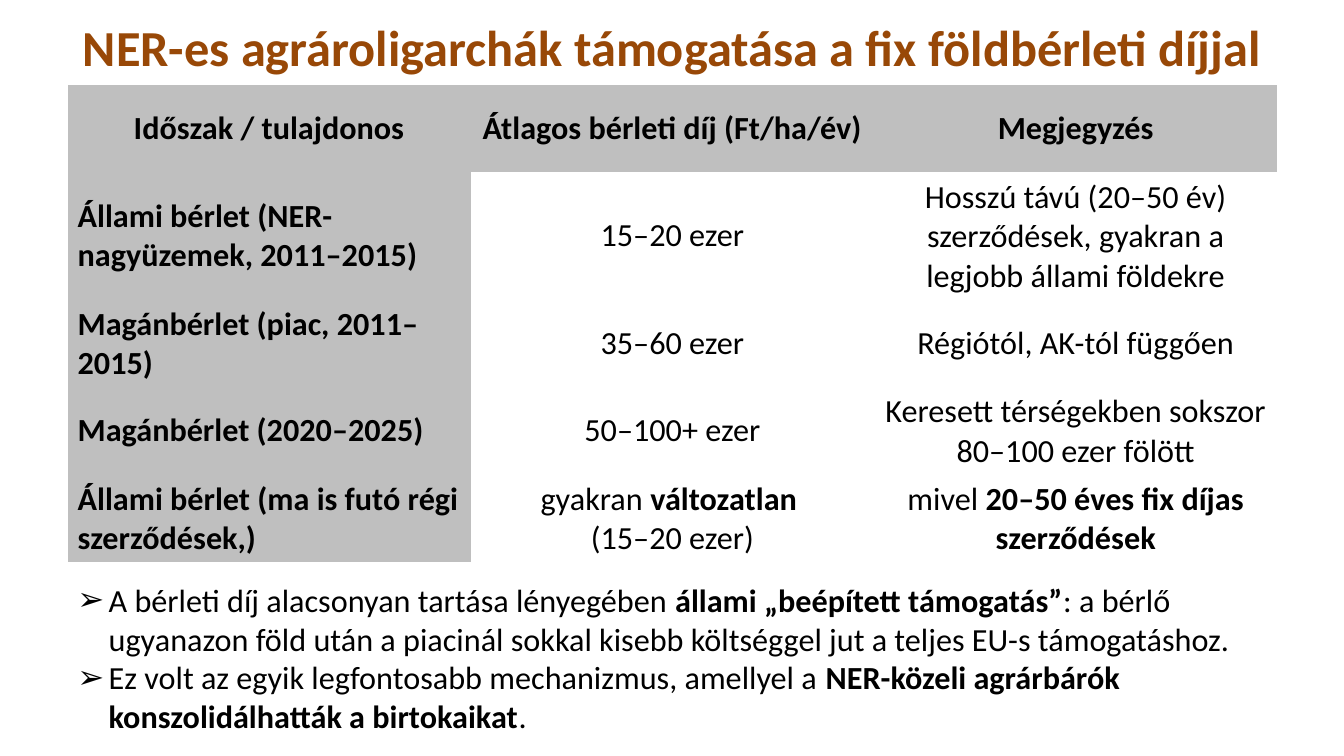
from lxml import etree
from pptx import Presentation, util as u
from pptx.dml.color import RGBColor
from pptx.enum import text
from pptx.oxml import ns

FONT = "Calibri"
BLACK, BROWN, GREY = "000000", "984807", "BFBFBF"
NO_GRID_STYLE = "{2D5ABB26-0587-4C30-8999-92F81FD0307C}"
LEFT, CENTER = text.PP_ALIGN.LEFT, text.PP_ALIGN.CENTER

TITLE = "**NER-es agrároligarchák támogatása a fix földbérleti díjjal**"
ROW_HEIGHTS = [0.87, 1.26, 0.87, 0.87, 0.87]
RENT_ROWS = [
    ["**Időszak / tulajdonos**", "**Átlagos bérleti díj (Ft/ha/év)**", "**Megjegyzés**"],
    ["**Állami bérlet (NER-nagyüzemek, 2011–2015)**", "15–20 ezer",
     "Hosszú távú (20–50 év) szerződések, gyakran a legjobb állami földekre"],
    ["**Magánbérlet (piac, 2011–2015)**", "35–60 ezer", "Régiótól, AK-tól függően"],
    ["**Magánbérlet (2020–2025)**", "50–100+ ezer",
     "Keresett térségekben sokszor 80–100 ezer fölött"],
    ["**Állami bérlet (ma is futó régi szerződések,)**",
     "gyakran **változatlan **\n(15–20 ezer)",
     "mivel **20–50 éves fix díjas szerződések**"],
]
CONCLUSIONS = (
    "A bérleti díj alacsonyan tartása lényegében **állami „beépített támogatás”**: a bérlő "
    "ugyanazon föld után a piacinál sokkal kisebb költséggel jut a teljes EU-s támogatáshoz.\n"
    "Ez volt az egyik legfontosabb mechanizmus, amellyel a "
    "**NER-közeli agrárbárók konszolidálhatták a birtokaikat**."
)


def color(value):
    """Turn a hex string into a colour."""
    return RGBColor.from_string(value)


def add_bullet(paragraph, character, indent):
    """Give a paragraph a hanging bullet."""
    properties = paragraph._p.get_or_add_pPr()
    properties.set("marL", str(u.Inches(indent)))
    properties.set("indent", str(-u.Inches(indent)))
    etree.SubElement(properties, ns.qn("a:buFont"), typeface="Arial")
    etree.SubElement(properties, ns.qn("a:buChar"), char=character)


def write(frame, content, size=23, fill=BLACK, align=LEFT, bullet=None):
    """Write lines into a text frame, with **marked** parts in bold."""
    frame.word_wrap = True
    for index, line in enumerate(content.split("\n")):
        paragraph = frame.add_paragraph() if index else frame.paragraphs[0]
        paragraph.alignment = align
        if bullet:
            add_bullet(paragraph, bullet, 0.31)
        for part_index, part in enumerate(line.split("**")):
            if part:
                run = paragraph.add_run()
                run.text = part
                run.font.name = FONT
                run.font.size = u.Pt(size)
                run.font.bold = part_index % 2 == 1
                run.font.color.rgb = color(fill)


def add_text(slide, box, content, **formatting):
    """Place a text box with formatted text."""
    shape = slide.shapes.add_textbox(*map(u.Inches, box))
    write(shape.text_frame, content, **formatting)


def add_rent_table(slide, box):
    """Place the rent comparison table with grey header row and column."""
    shape = slide.shapes.add_table(len(RENT_ROWS), len(RENT_ROWS[0]), *map(u.Inches, box))
    table = shape.table
    table._tbl.tblPr.find(ns.qn("a:tableStyleId")).text = NO_GRID_STYLE
    table.horz_banding = False
    for column in table.columns:
        column.width = u.Inches(box[2] / len(RENT_ROWS[0]))
    for row_index, (height, contents) in enumerate(zip(ROW_HEIGHTS, RENT_ROWS)):
        table.rows[row_index].height = u.Inches(height)
        for column_index, content in enumerate(contents):
            cell = table.cell(row_index, column_index)
            cell.vertical_anchor = text.MSO_ANCHOR.MIDDLE
            if row_index == 0 or column_index == 0:
                cell.fill.solid()
                cell.fill.fore_color.rgb = color(GREY)
            else:
                cell.fill.background()
            is_label = row_index > 0 and column_index == 0
            write(cell.text_frame, content, align=LEFT if is_label else CENTER)


def build_slide(presentation):
    """Build the slide about fixed land rents."""
    slide = presentation.slides.add_slide(presentation.slide_layouts[6])
    left, width = 0.67, 12
    add_text(slide, (left, 0.11, width, 0.63), TITLE, size=36, fill=BROWN, align=CENTER)
    add_rent_table(slide, (left, 0.84, width, sum(ROW_HEIGHTS)))
    add_text(slide, (left, 5.71, width, 1.65), CONCLUSIONS, bullet="➢")


def main():
    """Create and save the presentation."""
    presentation = Presentation()
    presentation.slide_width = u.Inches(13.33)
    presentation.slide_height = u.Inches(7.5)
    build_slide(presentation)
    presentation.save("out.pptx")


if __name__ == "__main__":
    main()
